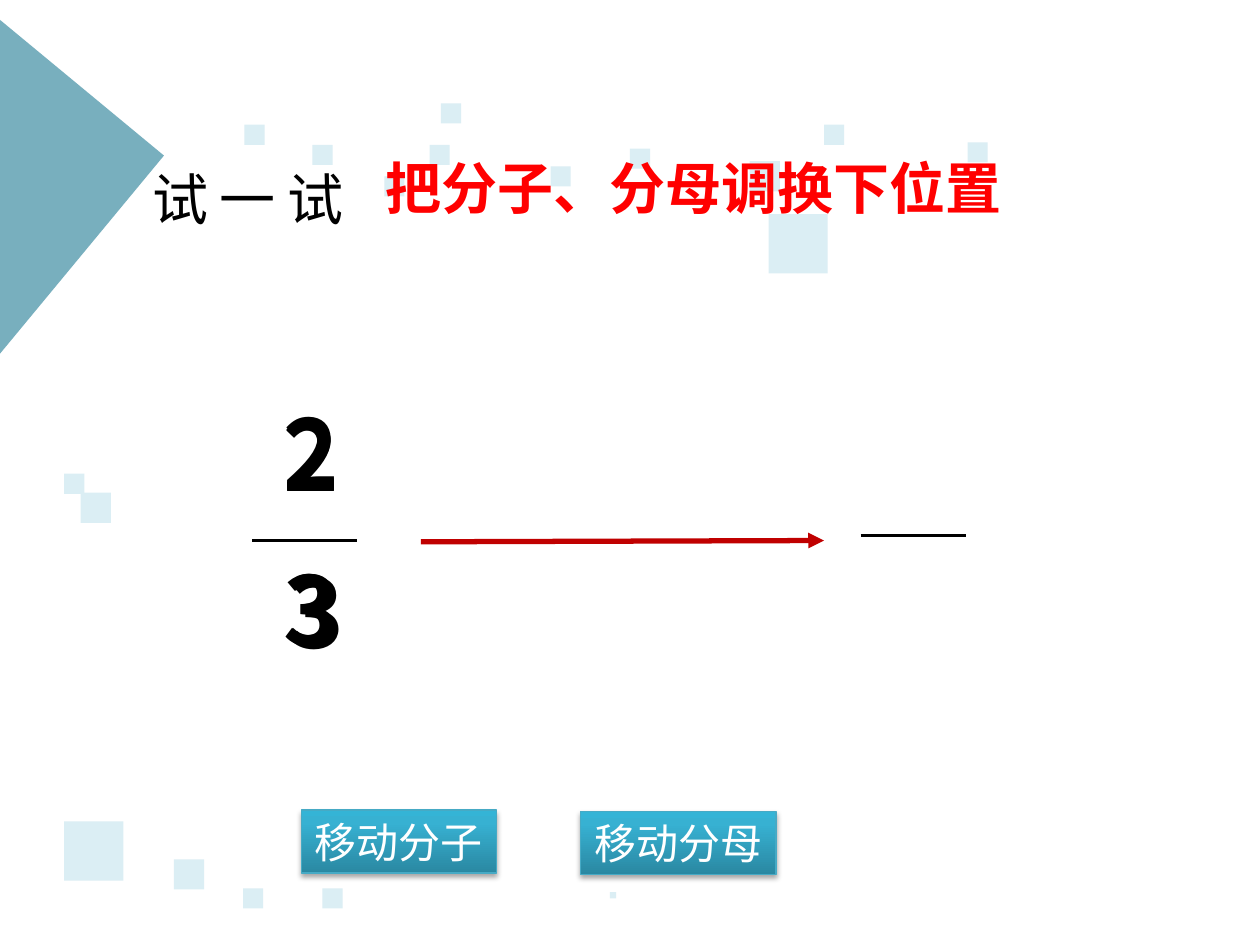
from copy import deepcopy

from lxml import etree
from pptx import Presentation
from pptx.dml.color import RGBColor
from pptx.enum.shapes import MSO_CONNECTOR, MSO_SHAPE
from pptx.enum.text import MSO_ANCHOR, MSO_AUTO_SIZE, PP_ALIGN
from pptx.oxml.ns import qn
from pptx.util import Emu, Pt

SCALE = 9144
RECTANGLE = MSO_SHAPE.RECTANGLE
STRAIGHT = MSO_CONNECTOR.STRAIGHT
GROW = MSO_AUTO_SIZE.SHAPE_TO_FIT_TEXT
TOP, MIDDLE = MSO_ANCHOR.TOP, MSO_ANCHOR.MIDDLE
LEFT, CENTER = PP_ALIGN.LEFT, PP_ALIGN.CENTER
SANS, LIGHT_SANS = "Noto Sans CJK SC", "Noto Sans CJK JP"

SQUARES = {
    47: [(51, 652), (610, 170)],
    24: [(138, 682), (64, 391), (595, 128)],
    16: [(256, 705), (193, 705), (654, 99), (500, 118), (341, 115), (248, 115),
         (350, 82), (437, 132), (305, 140), (51, 376), (768, 113), (194, 99)],
    5: [(484, 708)],
}
BUTTON_GRADIENT = [(0, "2A88A2"), (0.8, "37B1D2"), (1, "34B4D6")]


def px(length):
    """Turn px (100 to the inch) into EMU."""
    return Emu(length * SCALE)


def colour(code):
    """Turn a hex string into a colour."""
    return RGBColor.from_string(code)


def add_child(parent, tag, **attributes):
    """Append a DrawingML element with the given attributes."""
    values = {name: str(value) for name, value in attributes.items()}
    return etree.SubElement(parent, qn(tag), values)


def add_square(page, left, top, side, code):
    """Place a plain square without outline or shadow."""
    square = page.shapes.add_shape(RECTANGLE, px(left), px(top), px(side), px(side))
    square.shadow.inherit = False
    square.fill.solid()
    square.fill.fore_color.rgb = colour(code)
    square.line.fill.background()
    return square


def write(shape, text, font, size, code, bold=False, align=LEFT, anchor=TOP, wrap=True):
    """Fill a shape with one formatted line of text."""
    frame = shape.text_frame
    frame.text = text
    frame.word_wrap = wrap
    frame.auto_size = GROW
    frame.vertical_anchor = anchor
    para = frame.paragraphs[0]
    para.alignment = align
    span = para.runs[0]
    span.font.name = font
    span.font.size = Pt(size)
    span.font.bold = bold
    span.font.color.rgb = colour(code)
    add_child(span.font._element, "a:ea", typeface=font)


def add_text(page, box, text, font, size, code, bold=False):
    """Place a text box."""
    shape = page.shapes.add_textbox(*map(px, box))
    write(shape, text, font, size, code, bold)
    return shape


def add_line(page, start, end, code, width):
    """Draw a straight line without shadow."""
    line = page.shapes.add_connector(STRAIGHT, *map(px, start + end))
    line.line.color.rgb = colour(code)
    line.line.width = Pt(width)
    add_child(line._element.spPr, "a:effectLst")
    return line


def add_backdrop(page):
    """Place the large tilted square and the scattered small ones."""
    corner = add_square(page, -160, 19, 241, "31859C")
    corner.rotation = 39.6
    add_child(corner.fill.fore_color._xFill[0], "a:alpha", val=65000)
    for side, places in SQUARES.items():
        for left, top in places:
            add_square(page, left, top, side, "DBEEF4")


def add_heading(page, left, top):
    """Place the vertical label and the red instruction beside it."""
    add_text(page, (left + 198, top, 651, 64), "把分子、分母调换下位置", SANS, 32, "FF0000", True)
    label = add_text(page, (left, top + 9, 182, 55), "试一试", LIGHT_SANS, 32, "000000")
    label.text_frame._txBody.bodyPr.set("vert", "eaVert")


def add_fraction(page, left, top):
    """Place the fraction bar with its stacked movable digits."""
    add_line(page, (left, top + 121), (left + 83, top + 121), "000000", 2)
    layers = [((15, 0), (15, 124)), ((15, 1), (16, 124)), ((15, 2), (19, 127))]
    for layer in layers:
        for digit, (across, down) in zip("23", layer):
            add_text(page, (left + across, top + down, 45, 101), digit, SANS, 54, "000000", True)


def add_swap(page, left, top):
    """Draw the arrow that leads to the empty fraction bar."""
    arrow = add_line(page, (left, top + 5), (left + 320, top + 4), "C00000", 3)
    add_child(arrow.line._get_or_add_ln(), "a:tailEnd", type="triangle")
    add_line(page, (left + 349, top), (left + 433, top), "000000", 2)


def add_button(page, left, top, text):
    """Place a gradient button with a soft shadow."""
    button = page.shapes.add_shape(RECTANGLE, px(left), px(top), px(155), px(50))
    button.fill.gradient()
    button.fill.gradient_angle = 90
    stop_list = button._element.spPr.find(".//" + qn("a:gsLst"))
    stop_list.append(deepcopy(stop_list[0]))
    for stop, (position, code) in zip(button.fill.gradient_stops, BUTTON_GRADIENT):
        stop.position = position
        stop.color.rgb = colour(code)
    button.line.color.rgb = colour("46AAC5")
    button.line.width = Pt(0.75)
    effects = add_child(button._element.spPr, "a:effectLst")
    shadow = add_child(effects, "a:outerShdw", blurRad=Pt(3.1), dist=Pt(1.8),
                       dir=5400000, rotWithShape=0)
    add_child(add_child(shadow, "a:srgbClr", val="000000"), "a:alpha", val=35000)
    write(button, text, LIGHT_SANS, 24, "FFFFFF", align=CENTER, anchor=MIDDLE, wrap=False)


def main():
    """Build and save the slide."""
    deck = Presentation()
    deck.slide_width, deck.slide_height = px(1000), px(750)
    page = deck.slides.add_slide(deck.slide_layouts[6])
    add_backdrop(page)
    add_heading(page, 98, 117)
    add_fraction(page, 200, 308)
    add_swap(page, 334, 425)
    add_button(page, 239, 643, "移动分子")
    add_button(page, 461, 644, "移动分母")
    deck.save("out.pptx")


if __name__ == "__main__":
    main()
